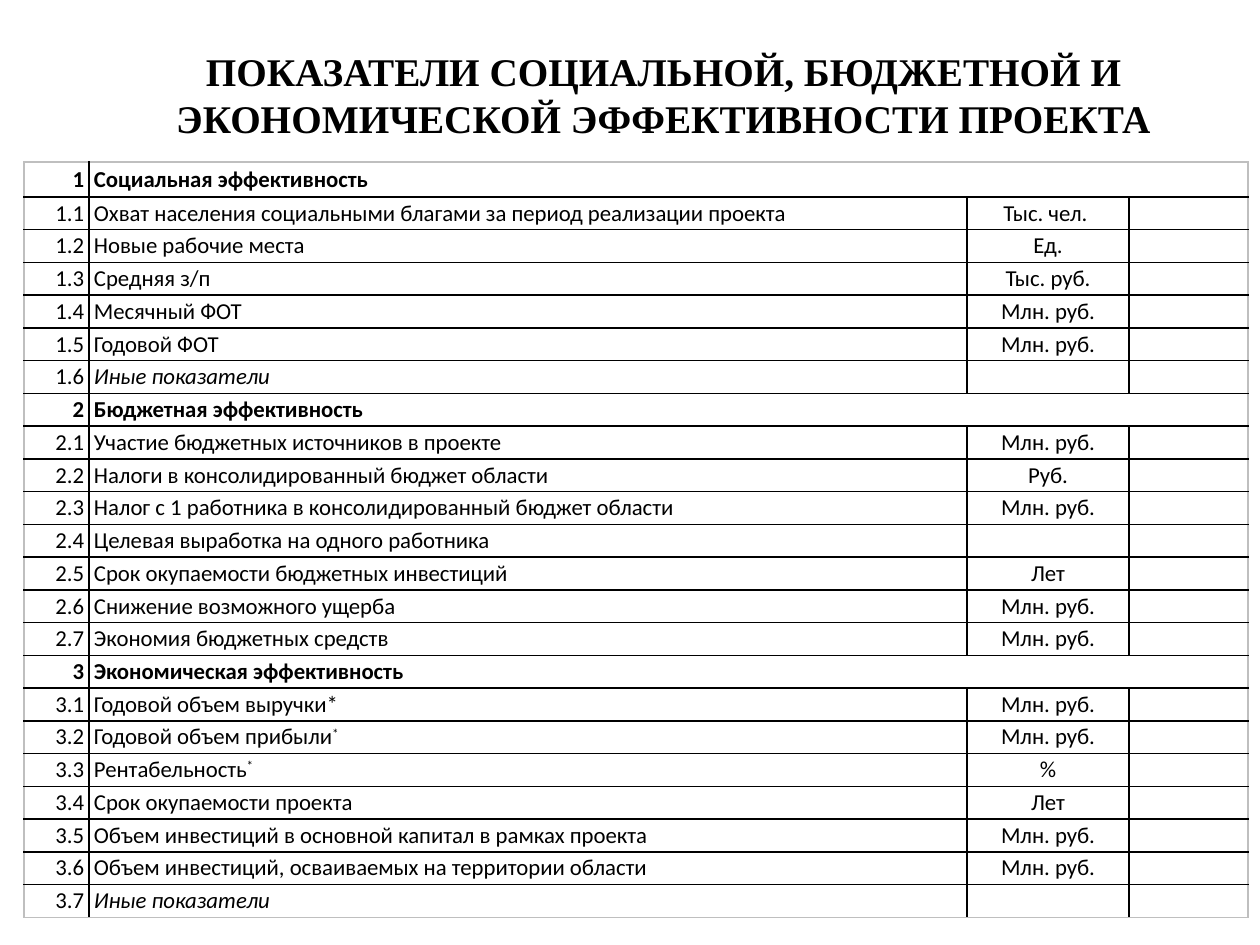
from lxml import etree
from pptx import Presentation
from pptx.dml.color import RGBColor
from pptx.enum.text import MSO_ANCHOR, PP_ALIGN
from pptx.oxml.ns import qn
from pptx.util import Pt

PX = 914400 / 126
LEFT, MID, RIGHT = PP_ALIGN.LEFT, PP_ALIGN.CENTER, PP_ALIGN.RIGHT
CENTER = MSO_ANCHOR.MIDDLE
COLORS = {"ink": "000000", "edge": "BFBFBF"}
MLN = "Млн. руб."
OTHER = "Иные показатели"

# Each section: heading, then pairs of indicator and unit
SECTIONS = [
    ("Социальная эффективность", [
        ("Охват населения социальными благами за период реализации проекта", "Тыс. чел. "),
        ("Новые рабочие места", "Ед."),
        ("Средняя з/п", "Тыс. руб."),
        ("Месячный ФОТ", MLN),
        ("Годовой ФОТ", MLN),
        (OTHER, ""),
    ]),
    ("Бюджетная эффективность", [
        ("Участие бюджетных источников в проекте", MLN),
        ("Налоги в консолидированный бюджет области", "Руб."),
        ("Налог с 1 работника в консолидированный бюджет области", MLN),
        ("Целевая выработка на одного работника", ""),
        ("Срок окупаемости бюджетных инвестиций", "Лет"),
        ("Снижение возможного ущерба", MLN),
        ("Экономия бюджетных средств", MLN),
    ]),
    ("Экономическая эффективность", [
        ("Годовой объем выручки*", MLN),
        ("Годовой объем прибыли", MLN),
        ("Рентабельность", "%"),
        ("Срок окупаемости проекта", "Лет"),
        ("Объем инвестиций в основной капитал в рамках проекта", MLN),
        ("Объем инвестиций, осваиваемых на территории области", MLN),
        (OTHER, ""),
    ]),
]
STARRED = ("Годовой объем прибыли", "Рентабельность")


def px(n):
    return round(n * PX)


def style(run, name, size, bold=False, italic=False):
    font = run.font
    font.name, font.size = name, Pt(size)
    font.bold, font.italic = bold, italic
    font.color.rgb = RGBColor.from_string(COLORS["ink"])


prs = Presentation()
prs.slide_width, prs.slide_height = px(1260), px(945)
slide = prs.slides.add_slide(prs.slide_layouts[6])

# Title
box = slide.shapes.add_textbox(px(157), px(39), px(1014), px(98))
frame = box.text_frame
frame.word_wrap = True
frame.vertical_anchor = CENTER
frame.margin_top = px(12)
frame.margin_bottom = 0
frame.text = "ПОКАЗАТЕЛИ СОЦИАЛЬНОЙ, БЮДЖЕТНОЙ И ЭКОНОМИЧЕСКОЙ ЭФФЕКТИВНОСТИ ПРОЕКТА"
title = frame.paragraphs[0]
title.alignment = MID
style(title.runs[0], "Times New Roman", 22.4, bold=True)

# Rows: number, indicator, unit, value, and whether it is a heading
rows = []
for i, (head, items) in enumerate(SECTIONS, 1):
    rows.append((str(i), head, "", "", True))
    for j, (name, unit) in enumerate(items, 1):
        rows.append((f"{i}.{j}", name, unit, "", False))

# Table grid
widths = [65, 878, 162, 119]
last_row, last_col = len(rows) - 1, len(widths) - 1
table = slide.shapes.add_table(
    len(rows), len(widths), px(24), px(162), px(sum(widths)), px(756)).table
table.first_row = table.horz_banding = False
for col, width in zip(table.columns, widths):
    col.width = px(width)
for row in table.rows:
    row.height = px(721 / last_row)
table.rows[0].height = px(35)

# Cells
for r, (*texts, is_head) in enumerate(rows):
    if is_head:
        table.cell(r, 1).merge(table.cell(r, last_col))
    for c, (text, align) in enumerate(zip(texts, (RIGHT, LEFT, MID, MID))):
        cell = table.cell(r, c)
        cell.margin_left = cell.margin_right = px(5)
        cell.margin_top = cell.margin_bottom = px(2)
        cell.vertical_anchor = CENTER
        para = cell.text_frame.paragraphs[0]
        para.text = text
        para.alignment = align
        for run in para.runs:
            style(run, "Calibri", 13, is_head, text == OTHER)
        if text in STARRED:
            star = para.add_run()
            star.text = "*"
            style(star, "Calibri", 13)
            star.font._element.set("baseline", "30000")
        if not text:
            etree.SubElement(para._p, qn("a:endParaRPr"), sz="1300")

        # Borders: grey around the table, black inside
        props = cell._tc.get_or_add_tcPr()
        sides = {"lnL": c == 0, "lnR": c == last_col or (is_head and c > 0),
                 "lnT": r == 0, "lnB": r == last_row}
        for side, outer in sides.items():
            line = etree.SubElement(props, qn(f"a:{side}"), w="12700")
            fill = etree.SubElement(line, qn("a:solidFill"))
            etree.SubElement(fill, qn("a:srgbClr"),
                             val=COLORS["edge" if outer else "ink"])
        cell.fill.background()

prs.save("out.pptx")
